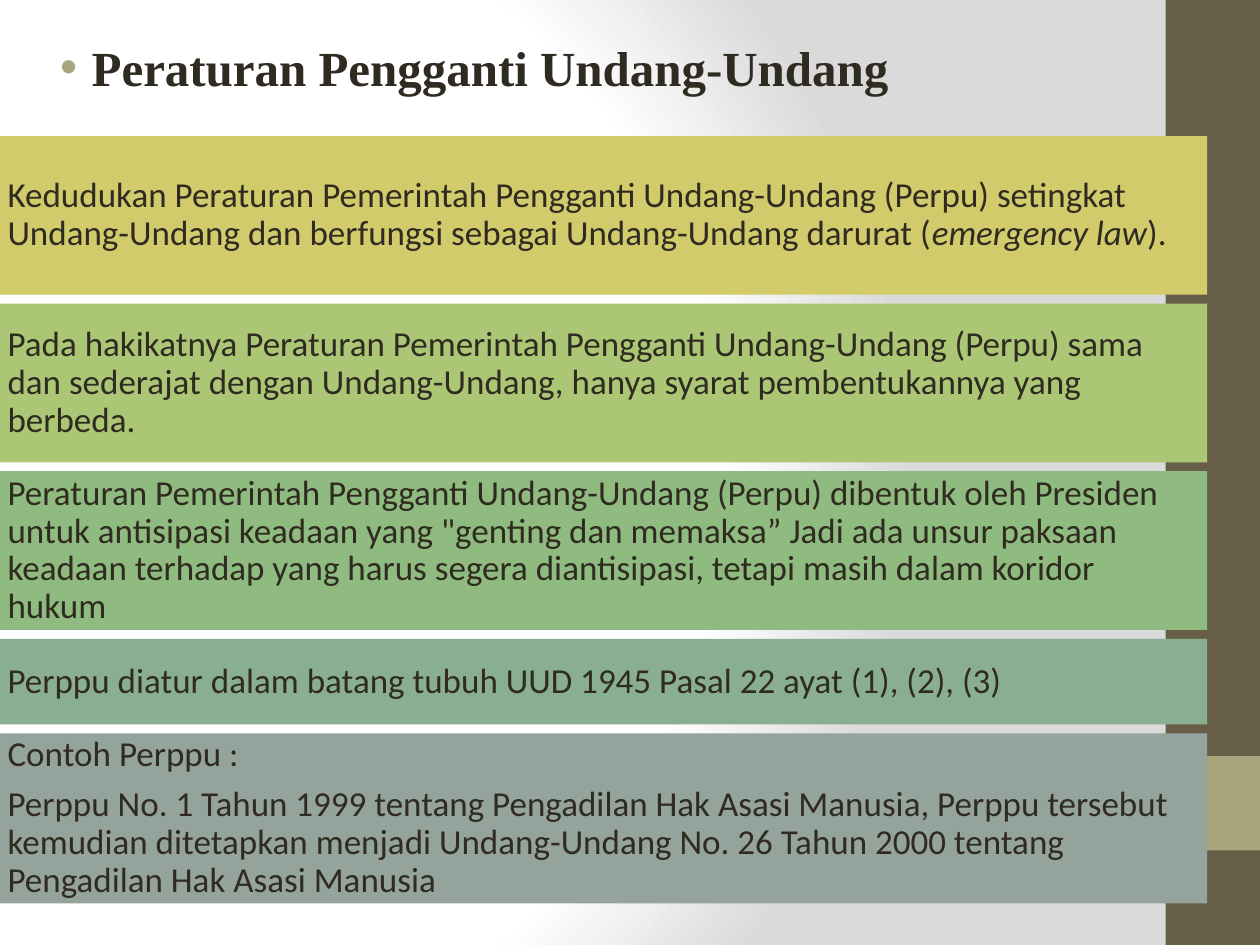
from pptx import Presentation
from pptx.dml.color import RGBColor
from pptx.enum.shapes import MSO_SHAPE
from pptx.enum.text import MSO_ANCHOR, PP_ALIGN
from pptx.oxml import parse_xml
from pptx.oxml.ns import nsdecls
from pptx.util import Inches, Pt

RECTANGLE = MSO_SHAPE.RECTANGLE
MIDDLE = MSO_ANCHOR.MIDDLE
LEFT = PP_ALIGN.LEFT

INK, BROWN, KHAKI = "2F2B20", "675E47", "A9A57C"
SLIDE_WIDTH, SLIDE_HEIGHT = 10, 7.5
SIDE_WIDTH = 0.75
BAND_TOP, BAND_WIDTH, BAND_GAP, BAND_INSET = 1.08, 9.58, 0.07, 0.06

BACKGROUND_STOPS = [(0, "FFFFFF"), (75, "FFFFFF"), (100, "DADADA")]

BANDS = [
    (1.26, "D2CB6C", [[
        ("Kedudukan Peraturan Pemerintah Pengganti Undang-Undang (Perpu) setingkat "
         "Undang-Undang dan berfungsi sebagai Undang-Undang darurat (", False),
        ("emergency law", True),
        (").", False)]]),
    (1.26, "ABC776", [[
        ("Pada hakikatnya Peraturan Pemerintah Pengganti Undang-Undang (Perpu) sama "
         "dan sederajat dengan Undang-Undang, hanya syarat pembentukannya yang "
         "berbeda.", False)]]),
    (1.26, "8FBB80", [[
        ("Peraturan Pemerintah Pengganti Undang-Undang (Perpu) dibentuk oleh Presiden "
         "untuk antisipasi keadaan yang \"genting dan memaksa” Jadi ada unsur paksaan "
         "keadaan terhadap yang harus segera diantisipasi, tetapi masih dalam koridor "
         "hukum", False)]]),
    (0.68, "8AAF90", [[
        ("Perppu diatur dalam batang tubuh UUD 1945 Pasal 22 ayat (1), (2), (3)", False)]]),
    (1.35, "95A39D", [
        [("Contoh Perppu :", False)],
        [("Perppu No. 1 Tahun 1999 tentang Pengadilan Hak Asasi Manusia, Perppu tersebut "
          "kemudian ditetapkan menjadi Undang-Undang No. 26 Tahun 2000 tentang "
          "Pengadilan Hak Asasi Manusia", False)]]),
]


def color(hex_string):
    """Turn a hex string into a colour."""
    return RGBColor.from_string(hex_string)


def set_background(slide):
    """Fill the slide with a soft radial gradient."""
    stops = "".join(
        f'<a:gs pos="{position * 1000}"><a:srgbClr val="{value}"/></a:gs>'
        for position, value in BACKGROUND_STOPS)
    background = parse_xml(
        f'<p:bg {nsdecls("p", "a")}><p:bgPr><a:gradFill rotWithShape="1">'
        f'<a:gsLst>{stops}</a:gsLst><a:path path="circle">'
        '<a:fillToRect l="20000" t="50000" r="100000" b="50000"/></a:path>'
        '</a:gradFill><a:effectLst/></p:bgPr></p:bg>')
    slide.element.cSld.insert(0, background)


def add_block(slide, left, top, width, height, fill):
    """Add a plain rectangle without line or shadow."""
    shape = slide.shapes.add_shape(
        RECTANGLE, Inches(left), Inches(top), Inches(width), Inches(height))
    shape.shadow.inherit = False
    shape.fill.solid()
    shape.fill.fore_color.rgb = color(fill)
    shape.line.fill.background()
    return shape


def set_font(paragraph, name, size, bold=False):
    """Set the font of a whole paragraph."""
    paragraph.font.name = name
    paragraph.font.size = Pt(size)
    paragraph.font.bold = bold
    paragraph.font.color.rgb = color(INK)


def add_heading(slide, text):
    """Add the bulleted heading."""
    box = slide.shapes.add_textbox(Inches(0.25), Inches(0.25), Inches(9.5), Inches(7))
    box.text_frame.word_wrap = True
    paragraph = box.text_frame.paragraphs[0]
    paragraph.text = text
    paragraph.space_before = Pt(5.6)
    set_font(paragraph, "Times New Roman", 28, bold=True)
    properties = paragraph._p.get_or_add_pPr()
    properties.set("marL", str(Inches(0.38)))
    properties.set("indent", str(Inches(-0.25)))
    bullet_parts = [
        f'<a:buClr {nsdecls("a")}><a:srgbClr val="{KHAKI}"/></a:buClr>',
        f'<a:buFont {nsdecls("a")} typeface="Arial"/>',
        f'<a:buChar {nsdecls("a")} char="•"/>']
    for part in bullet_parts:
        properties.insert_element_before(parse_xml(part), "a:defRPr")


def add_band(slide, top, height, fill, paragraphs):
    """Add a coloured band with its paragraphs of (text, italic) runs."""
    frame = add_block(slide, 0, top, BAND_WIDTH, height, fill).text_frame
    frame.word_wrap = True
    frame.vertical_anchor = MIDDLE
    frame.margin_left = frame.margin_right = Inches(BAND_INSET)
    frame.margin_top = frame.margin_bottom = Inches(BAND_INSET)
    for index, runs in enumerate(paragraphs):
        paragraph = frame.add_paragraph() if index else frame.paragraphs[0]
        paragraph.alignment = LEFT
        paragraph.line_spacing = 0.9
        paragraph.space_after = Pt(7)
        set_font(paragraph, "Calibri", 20)
        for text, italic in runs:
            run = paragraph.add_run()
            run.text = text
            if italic:
                run.font.italic = True


def main():
    """Build and save the slide."""
    presentation = Presentation()
    presentation.slide_width = Inches(SLIDE_WIDTH)
    presentation.slide_height = Inches(SLIDE_HEIGHT)
    slide = presentation.slides.add_slide(presentation.slide_layouts[6])
    set_background(slide)
    side_left = SLIDE_WIDTH - SIDE_WIDTH
    add_block(slide, side_left, 0, SIDE_WIDTH, SLIDE_HEIGHT, BROWN)
    add_block(slide, side_left, SLIDE_HEIGHT * 0.8, SIDE_WIDTH, SIDE_WIDTH, KHAKI)
    add_heading(slide, "Peraturan Pengganti Undang-Undang")
    top = BAND_TOP
    for height, fill, paragraphs in BANDS:
        add_band(slide, top, height, fill, paragraphs)
        top += height + BAND_GAP
    presentation.save("out.pptx")


if __name__ == "__main__":
    main()
